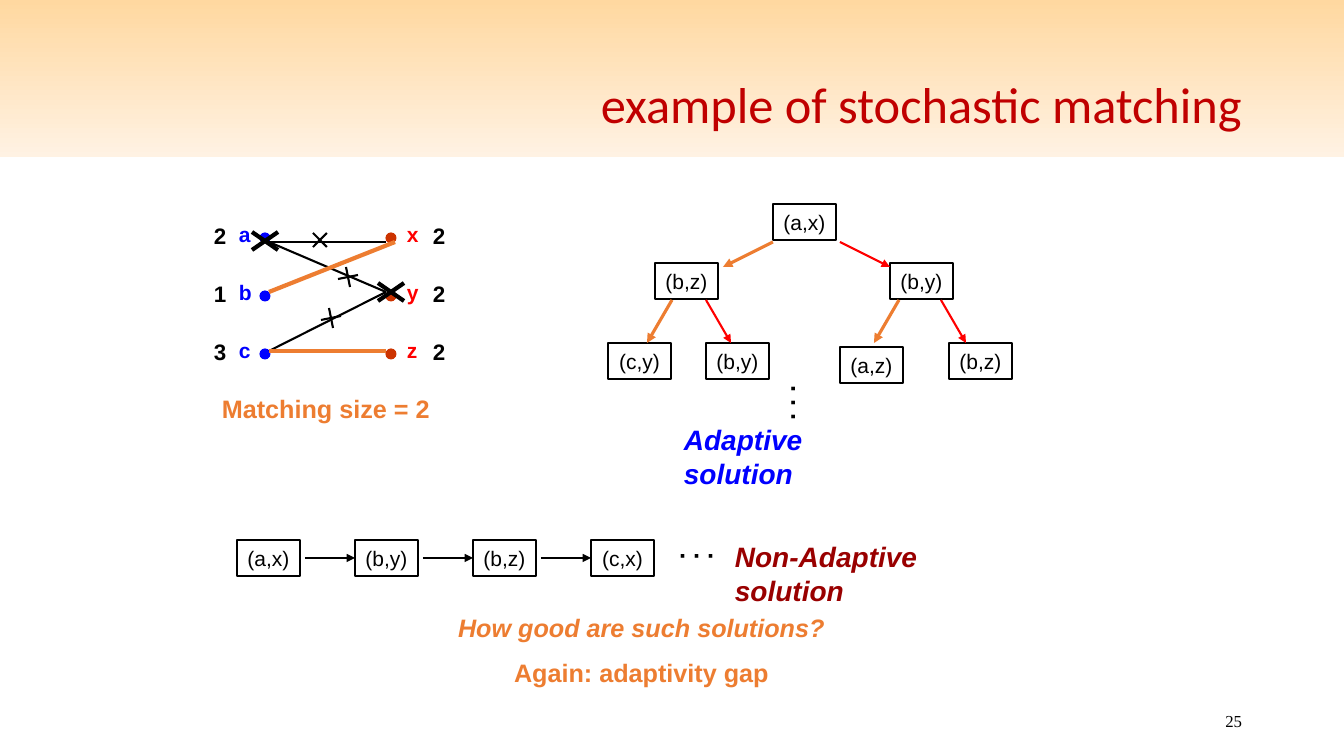
from pptx import Presentation
from pptx.dml.color import RGBColor
from pptx.enum.shapes import MSO_CONNECTOR as Link, MSO_SHAPE as Shape
from pptx.enum.text import MSO_ANCHOR as Anchor, PP_ALIGN as Align
from pptx.oxml.ns import qn
from pptx.util import Emu, Pt
from lxml.etree import SubElement

WIDE, HIGH = 1344, 756
SCALE = 12192000 / WIDE
BLACK, BLUE, RED, ORANGE = "000000", "0000FF", "FF0000", "ED7D31"
RUST, TITLE, MAROON = "CC3300", "C00000", "990000"


def px(*nums):
    """Turn px lengths into a list of EMU."""
    return [Emu(round(n * SCALE)) for n in nums]


def color(code):
    return RGBColor.from_string(code)


class Board:
    """Holds the font and the slide being drawn."""

    def __init__(self, slide, font="Arial"):
        self.shapes = slide.shapes
        self.font = font

    def style(self, para, size, hue, bold=False, slant=False, font=None):
        face = para.font
        face.name = font or self.font
        face.size = Pt(size)
        face.bold = bold
        face.italic = slant
        face.color.rgb = color(hue)

    def text(self, words, box, size, hue, bold=True, slant=False, font=None,
             align=Align.LEFT, wrap=False, mid=False, turn=0):
        label = self.shapes.add_textbox(*px(*box))
        label.rotation = turn
        frame = label.text_frame
        frame.word_wrap = wrap
        frame.vertical_anchor = Anchor.MIDDLE if mid else Anchor.TOP
        para = frame.paragraphs[0]
        para.text = words
        para.alignment = align
        self.style(para, size, hue, bold, slant, font)
        return frame

    def shape(self, kind, box):
        item = self.shapes.add_shape(kind, *px(*box))
        item.shadow.inherit = False
        return item

    def band(self, box, top, base):
        """Draw a borderless bar that fades from top to base."""
        bar = self.shape(Shape.RECTANGLE, box)
        bar.line.fill.background()
        bar.fill.gradient()
        bar.fill.gradient_angle = 270
        for stop, hue in zip(bar.fill.gradient_stops, (top, base)):
            stop.color.rgb = color(hue)

    def dot(self, x, y, hue):
        spot = self.shape(Shape.OVAL, (x, y, 10, 10))
        spot.fill.solid()
        spot.fill.fore_color.rgb = color(hue)
        spot.line.color.rgb = color(hue)
        spot.line.width = Pt(0.75)

    def node(self, words, x, y):
        item = self.shape(Shape.RECTANGLE, (x, y, 63, 36))
        item.fill.background()
        item.line.color.rgb = color(BLACK)
        item.line.width = Pt(1.5)
        item.text_frame.word_wrap = False
        para = item.text_frame.paragraphs[0]
        para.text = words
        para.alignment = Align.CENTER
        self.style(para, 15, BLACK)
        return item

    def line(self, start, end, hue=BLACK, width=1.5, arrow=False, group=None):
        home = group.shapes if group else self.shapes
        link = home.add_connector(Link.STRAIGHT, *px(*start, *end))
        link.line.color.rgb = color(hue)
        link.line.width = Pt(width)
        if arrow:
            SubElement(link.line._get_or_add_ln(), qn("a:tailEnd"), type="triangle")
        SubElement(link._element.spPr, qn("a:effectLst"))
        return link

    def cross(self, x, y, arms, width=1.5):
        """Draw each arm as a line through the centre (x, y)."""
        group = self.shapes.add_group_shape()
        for dx, dy in arms:
            self.line((x - dx, y - dy), (x + dx, y + dy), width=width, group=group)


def graph(board):
    rows = [("2", "a", "x", "2"), ("1", "b", "y", "2"), ("3", "c", "z", "2")]
    for i, (lnum, left, right, rnum) in enumerate(rows):
        top = 217 + 58 * i
        board.dot(260, top + 16, BLUE)
        board.dot(386, top + 16, RUST)
        board.text(lnum, (204, top, 32, 37), 16, BLACK)
        board.text(rnum, (423, top, 32, 37), 16, BLACK)
        board.text(left, (229, top, 32, 35), 15, BLUE)
        board.text(right, (397, top, 32, 35), 15, RED)

    a, b, c = (269, 242), (269, 292), (269, 351)
    x, y, z = (386, 242), (386, 292), (386, 351)
    for start, end in [(a, x), (a, y), (y, c)]:
        board.line(start, end)
    for start, end in [((395, 242), b), (c, z)]:
        board.line(start, end, ORANGE, 3)

    thick = [(13, 9), (-13, 9)]
    board.cross(265, 241, thick, 3)
    board.cross(391, 292, thick, 3)
    board.cross(320, 240, [(7, 7), (-7, 7)])
    board.cross(348, 277, [(2, 10), (-10, 2)])
    board.cross(331, 318, [(2, 10), (-10, 2)])
    board.text("Matching size = 2", (212, 388, 228, 40), 18, ORANGE)


def tree(board):
    nodes = [("(a,x)", 773, 204), ("(b,z)", 655, 263), ("(b,y)", 890, 263),
             ("(c,y)", 608, 343), ("(b,y)", 706, 343),
             ("(a,z)", 840, 347), ("(b,z)", 949, 343)]
    for node in nodes:
        board.node(*node)
    hits = [((773, 242), (723, 267)), ((672, 300), (647, 343)),
            ((899, 300), (874, 343))]
    fails = [((840, 242), (890, 267)), ((706, 300), (731, 343)),
             ((941, 300), (966, 343))]
    for start, end in hits:
        board.line(start, end, ORANGE, 2.25, arrow=True)
    for start, end in fails:
        board.line(start, end, RED, arrow=True)
    board.text(". . .", (774, 383, 55, 40), 18, BLACK, turn=90)
    board.text("Adaptive solution", (674, 418, 250, 43), 20, BLUE,
               slant=True, wrap=True)


def chain(board):
    for i, words in enumerate(["(a,x)", "(b,y)", "(b,z)", "(c,x)"]):
        left = 237 + 118 * i
        node = board.node(words, left, 540)
        if i:
            link = board.line((left - 50, 558), (left, 558), arrow=True)
            link.end_connect(node, 1)
    board.text(". . .", (669, 545, 55, 40), 18, BLACK, turn=180)
    board.text("Non-Adaptive solution", (725, 535, 314, 43), 20, MAROON,
               slant=True, wrap=True)


def main():
    deck = Presentation()
    deck.slide_width, deck.slide_height = px(WIDE, HIGH)
    board = Board(deck.slides.add_slide(deck.slide_layouts[6]))

    board.band((0, 0, WIDE, 157), "FFD8A0", "FFF2E3")
    board.text("25", (950, 701, 302, 40), 12, BLACK, bold=False,
               font="Times New Roman", align=Align.RIGHT, wrap=True, mid=True)
    board.text("example of stochastic matching", (93, 30, 1159, 146), 36, TITLE,
               bold=False, font="Calibri", align=Align.RIGHT, wrap=True, mid=True)
    graph(board)
    tree(board)
    chain(board)

    frame = board.text("How good are such solutions?", (446, 607, 391, 87), 18,
                       ORANGE, slant=True, align=Align.CENTER, wrap=True)
    para = frame.add_paragraph()
    para.text = "Again: adaptivity gap"
    para.alignment = Align.CENTER
    para.line_spacing = 1.5
    board.style(para, 18, ORANGE, bold=True)
    deck.save("out.pptx")


if __name__ == "__main__":
    main()
